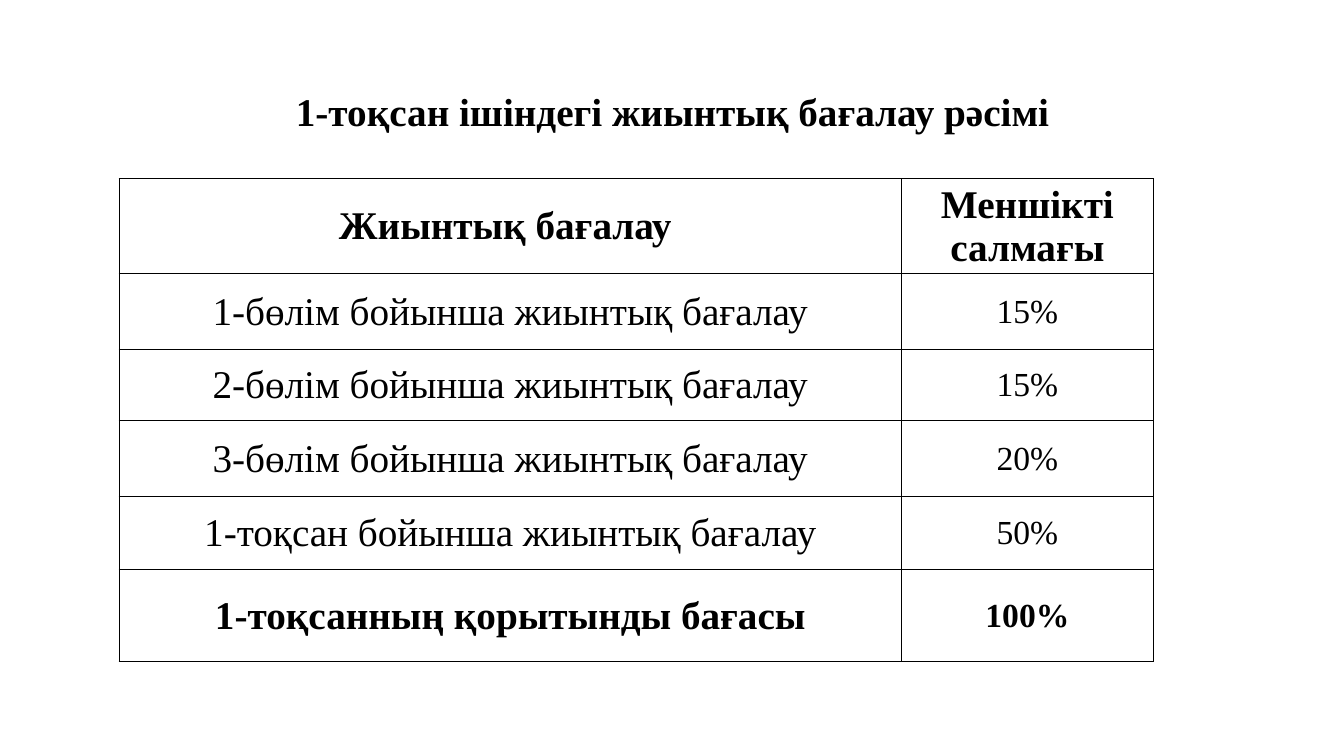
"""Build a slide with the weights of the first-term summative assessments."""
from lxml import etree
from pptx import Presentation
from pptx import util as u
from pptx.dml import color
from pptx.enum import text
from pptx.oxml import ns

TITLE = "1-тоқсан ішіндегі жиынтық бағалау рәсімі"
ROWS = [
    ("Жиынтық бағалау ", "Меншікті салмағы"),
    ("1-бөлім бойынша жиынтық бағалау", "15%"),
    ("2-бөлім бойынша жиынтық бағалау", "15%"),
    ("3-бөлім бойынша жиынтық бағалау", "20%"),
    ("1-тоқсан бойынша жиынтық бағалау", "50%"),
    ("1-тоқсанның қорытынды бағасы", "100%"),
]
COLUMN_WIDTHS = [7.76, 2.5]
ROW_HEIGHTS = [0.85, 0.75, 0.71, 0.75, 0.72, 0.92]
FONT = "Times New Roman"
BLACK, WHITE = "000000", "FFFFFF"
LARGE, SMALL = 28, 24
BORDER_WIDTH = 0.5


def rgb(value):
    """Return the colour for a hex string."""
    return color.RGBColor.from_string(value)


def write(frame, content, size, bold):
    """Put centred text in a text frame."""
    frame.text = content
    paragraph = frame.paragraphs[0]
    paragraph.alignment = text.PP_ALIGN.CENTER
    for run in paragraph.runs:
        run.font.name = FONT
        run.font.size = u.Pt(size)
        run.font.bold = bold
        run.font.color.rgb = rgb(BLACK)
    return paragraph


def add_borders(cell):
    """Draw a thin line on each side of a cell."""
    properties = cell._tc.get_or_add_tcPr()
    for position, side in enumerate(("lnL", "lnR", "lnT", "lnB")):
        line = etree.Element(ns.qn(f"a:{side}"), w=str(u.Pt(BORDER_WIDTH)))
        fill = etree.SubElement(line, ns.qn("a:solidFill"))
        etree.SubElement(fill, ns.qn("a:srgbClr"), val=BLACK)
        properties.insert(position, line)


def add_title(slide):
    """Add the slide heading."""
    box = slide.shapes.add_textbox(
        u.Inches(0.92), u.Inches(0.4), u.Inches(11.5), u.Inches(1.45))
    box.text_frame.word_wrap = True
    box.text_frame.vertical_anchor = text.MSO_ANCHOR.MIDDLE
    write(box.text_frame, TITLE, LARGE, True).line_spacing = 0.9


def add_weights_table(slide):
    """Add the table of assessments and weights."""
    table = slide.shapes.add_table(
        len(ROWS), len(COLUMN_WIDTHS), u.Inches(1.18), u.Inches(1.77),
        u.Inches(sum(COLUMN_WIDTHS)), u.Inches(sum(ROW_HEIGHTS))).table
    table.horz_banding = False
    for column, width in zip(table.columns, COLUMN_WIDTHS):
        column.width = u.Inches(width)
    for row, height in zip(table.rows, ROW_HEIGHTS):
        row.height = u.Inches(height)
    for i, row in enumerate(ROWS):
        for j, content in enumerate(row):
            cell = table.cell(i, j)
            cell.margin_left = cell.margin_right = cell.margin_top = u.Inches(0.01)
            cell.margin_bottom = 0
            cell.vertical_anchor = text.MSO_ANCHOR.MIDDLE
            cell.fill.solid()
            cell.fill.fore_color.rgb = rgb(WHITE)
            add_borders(cell)
            size = SMALL if i > 0 and j > 0 else LARGE
            write(cell.text_frame, content, size, i in (0, len(ROWS) - 1))


def main():
    """Build and save the presentation."""
    presentation = Presentation()
    presentation.slide_width = u.Inches(13.33)
    presentation.slide_height = u.Inches(7.5)
    slide = presentation.slides.add_slide(presentation.slide_layouts[6])
    add_title(slide)
    add_weights_table(slide)
    presentation.save("out.pptx")


if __name__ == "__main__":
    main()
